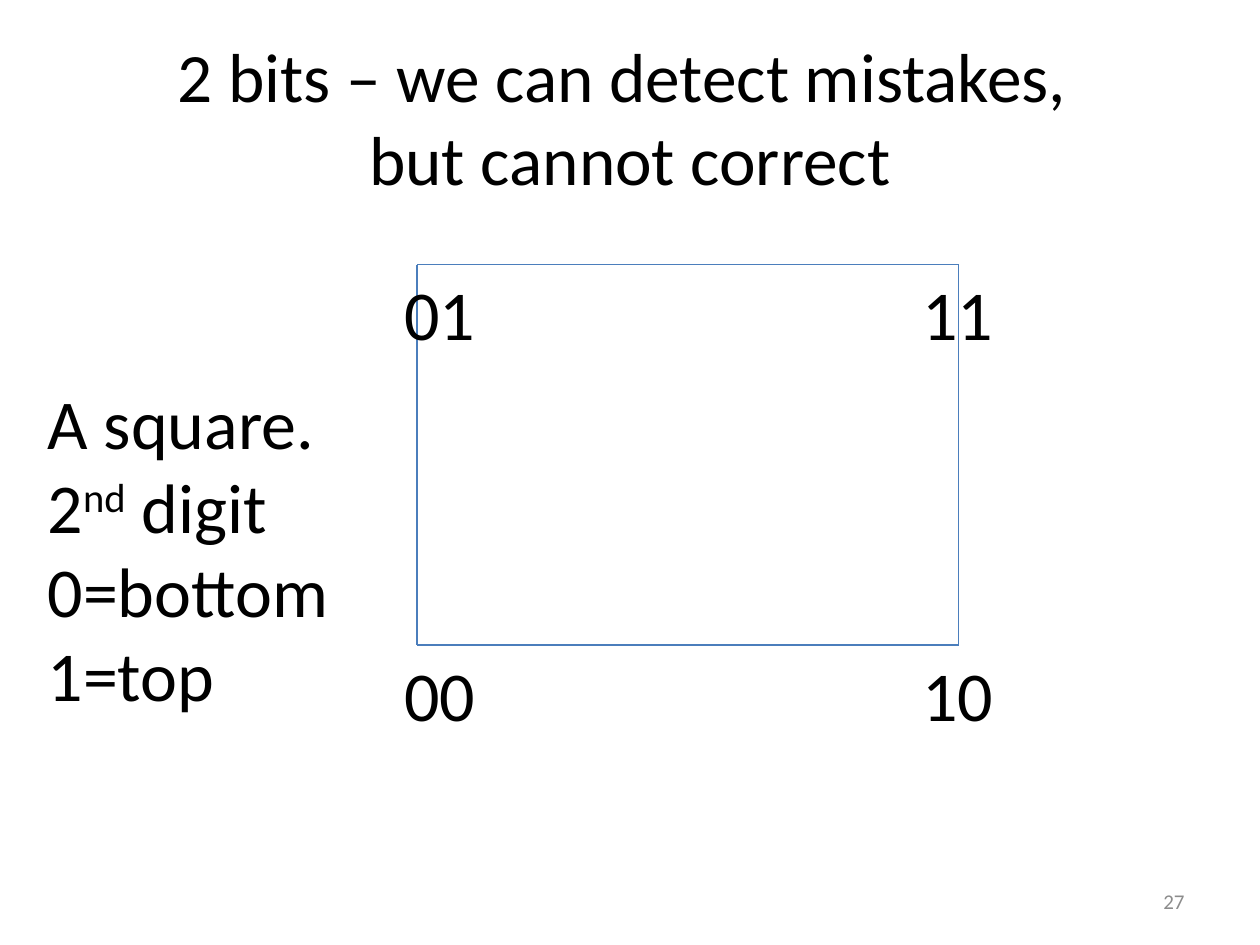
import pptx
import pptx.dml.color
import pptx.enum.shapes
import pptx.enum.text
import pptx.oxml.ns
import pptx.util
from lxml import etree
from pptx.util import Inches

BLACK = pptx.dml.color.RGBColor(0x00, 0x00, 0x00)
GRAY = pptx.dml.color.RGBColor(0x8C, 0x8C, 0x8C)
BLUE = pptx.dml.color.RGBColor(0x4B, 0x7E, 0xBC)
ALIGN = pptx.enum.text.PP_ALIGN
ANCHOR = pptx.enum.text.MSO_ANCHOR

LEFT, RIGHT = 3.31, 7.61
TOP, BOTTOM = 2.1, 5.12
LABEL_COLUMNS = (3.11, 7.22)
LABEL_ROWS = (BOTTOM, TOP)


class SlideBuilder:
    font_name = "Calibri"

    def __init__(self, page):
        self.page = page

    def format(self, frame, size, color, align):
        for para in frame.paragraphs:
            para.alignment = align
            for span in para.runs:
                span.font.name = self.font_name
                span.font.size = pptx.util.Pt(size)
                span.font.color.rgb = color

    def title(self, text, left, top, width, height):
        box = self.page.shapes.title
        box.left, box.top = Inches(left), Inches(top)
        box.width, box.height = Inches(width), Inches(height)
        frame = box.text_frame
        frame.text = text
        frame.auto_size = pptx.enum.text.MSO_AUTO_SIZE.NONE
        frame.vertical_anchor = ANCHOR.MIDDLE
        self.format(frame, 39.6, BLACK, ALIGN.CENTER)

    def text(self, lines, left, top, width, height, size=40, color=BLACK,
             align=ALIGN.LEFT, anchor=ANCHOR.TOP, wrap=False):
        box = self.page.shapes.add_textbox(
            Inches(left), Inches(top), Inches(width), Inches(height))
        frame = box.text_frame
        frame.word_wrap = wrap
        frame.vertical_anchor = anchor
        for index, pieces in enumerate(lines):
            para = frame.add_paragraph() if index else frame.paragraphs[0]
            for position, piece in enumerate(pieces):
                span = para.add_run()
                span.text = piece
                if position == 1:
                    span._r.get_or_add_rPr().set("baseline", "30000")
        self.format(frame, size, color, align)

    def line(self, start, end):
        edge = self.page.shapes.add_connector(
            pptx.enum.shapes.MSO_CONNECTOR.STRAIGHT,
            *(Inches(value) for value in start + end))
        edge.line.color.rgb = BLUE
        edge.line.width = pptx.util.Pt(0.75)
        etree.SubElement(edge._element.spPr, pptx.oxml.ns.qn("a:effectLst"))


def main():
    deck = pptx.Presentation()
    deck.slide_width, deck.slide_height = Inches(10), Inches(7.5)
    slide = SlideBuilder(deck.slides.add_slide(deck.slide_layouts[5]))

    slide.title("2 bits – we can detect mistakes, \vbut cannot correct",
                0.5, 0.3, 9, 1.25)

    corners = [(LEFT, BOTTOM), (RIGHT, BOTTOM), (RIGHT, TOP), (LEFT, TOP)]
    for start, end in zip(corners, corners[1:] + corners[:1]):
        slide.line(start, end)

    for first, left in enumerate(LABEL_COLUMNS):
        for second, top in enumerate(LABEL_ROWS):
            slide.text([[f"{first}{second}"]], left, top, 0.77, 0.77)

    slide.text([["A square."], ["2", "nd", " digit"], ["0=bottom"], ["1=top"]],
               0.28, 2.96, 2.46, 2.79)
    slide.text([["27"]], 7.17, 6.95, 2.33, 0.4, size=12, color=GRAY,
               align=ALIGN.RIGHT, anchor=ANCHOR.MIDDLE, wrap=True)

    deck.save("out.pptx")


if __name__ == "__main__":
    main()
